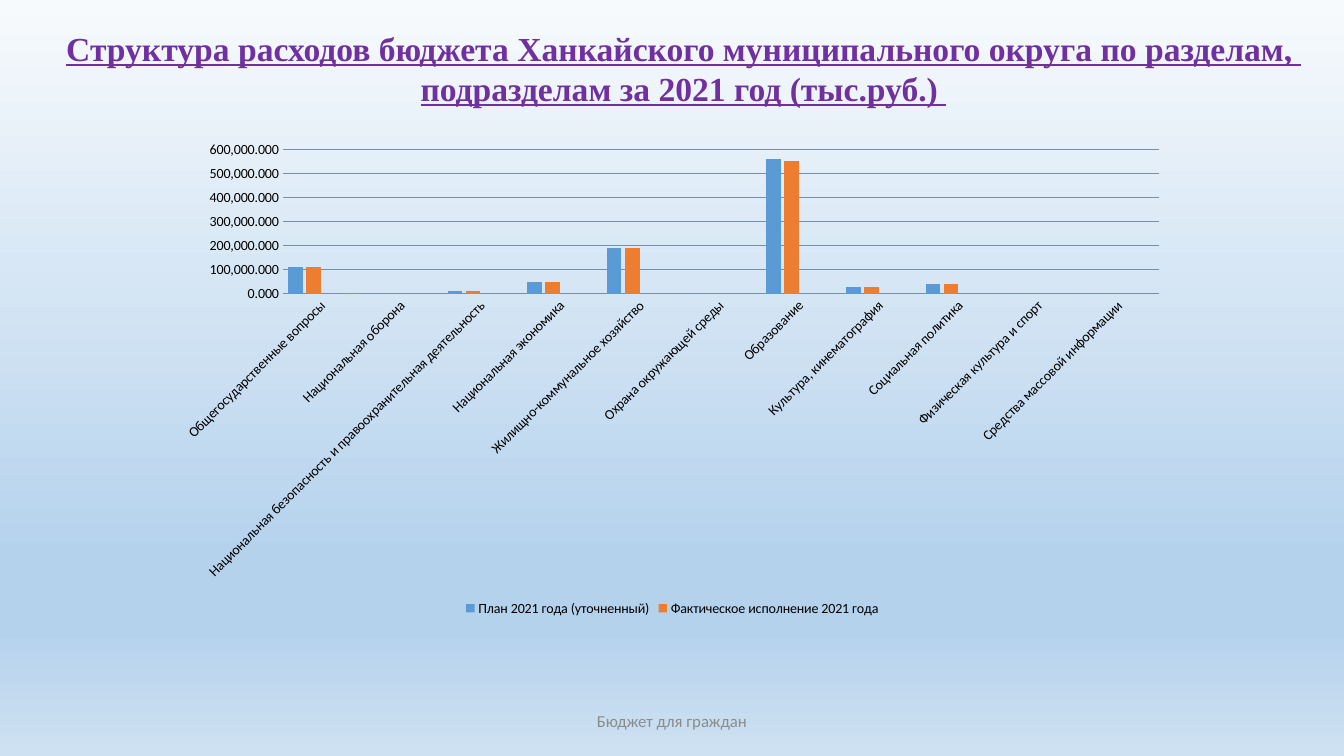
from lxml import etree
from pptx import Presentation
from pptx.chart import data as chart_data
from pptx.dml.color import RGBColor
from pptx.enum import chart as chart_enum, text
from pptx.oxml import ns, parse_xml
from pptx.util import Cm, Pt

# Content
TITLE = [
    "Структура расходов бюджета Ханкайского муниципального округа по разделам, ",
    "подразделам за 2021 год (тыс.руб.) ",
]
FOOTER = ["Бюджет для граждан"]
EXPENSES = [  # section, plan, actual
    ("Общегосударственные вопросы", 110000, 110000),
    ("Национальная оборона", 0, 0),
    ("Национальная безопасность и правоохранительная деятельность", 10000, 10000),
    ("Национальная экономика", 50000, 50000),
    ("Жилищно-коммунальное хозяйство", 190000, 190000),
    ("Охрана окружающей среды", 0, 0),
    ("Образование", 560000, 550000),
    ("Культура, кинематография", 30000, 30000),
    ("Социальная политика", 40000, 40000),
    ("Физическая культура и спорт", 0, 0),
    ("Средства массовой информации", 0, 0),
]
SECTIONS, PLAN, ACTUAL = zip(*EXPENSES)
EMPTY = [0] + [None] * (len(SECTIONS) - 1)
SERIES = [  # name, values, colour, shown in legend
    ("План 2021 года (уточненный)", PLAN, "5B9BD5", True),
    ("Фактическое исполнение 2021 года", ACTUAL, "ED7D31", True),
    ("Series 3", EMPTY, "A5A5A5", False),
    ("Series 4", EMPTY, "FFC000", False),
]
BACKGROUND = [(0, "F7FAFD"), (74, "B5D2EC"), (83, "B5D2EC"), (100, "CEE1F2")]
GRID_COLOUR = "7890A6"

# Formats
TITLE_FONT = {"name": "Times New Roman", "size": Pt(24), "bold": True, "underline": True}
FOOTER_FONT = {"name": "Calibri", "size": Pt(12)}
CHART_FONT = {"name": "Calibri", "size": Pt(10)}


def colour(hex_string):
    return RGBColor.from_string(hex_string)


def set_format(target, values):
    for name, value in values.items():
        setattr(target, name, value)


def set_font(font, values, hex_string):
    set_format(font, values)
    font.color.rgb = colour(hex_string)


def add_text(slide, box, lines, font, hex_string, frame_format):
    shape = slide.shapes.add_textbox(*map(Cm, box))
    frame = shape.text_frame
    frame.text = "\n".join(lines)
    set_format(frame, frame_format)
    for paragraph in frame.paragraphs:
        paragraph.alignment = text.PP_ALIGN.CENTER
        set_font(paragraph.runs[0].font, font, hex_string)


def set_background(slide):
    slide.background.fill.solid()
    properties = slide.background.fill._xPr
    stops = "".join(
        f'<a:gs pos="{position * 1000}"><a:srgbClr val="{hex_string}"/></a:gs>'
        for position, hex_string in BACKGROUND
    )
    gradient = parse_xml(
        f'<a:gradFill {ns.nsdecls("a")} rotWithShape="1"><a:gsLst>{stops}</a:gsLst>'
        '<a:lin ang="5400000" scaled="0"/></a:gradFill>'
    )
    properties.replace(properties.find(ns.qn("a:solidFill")), gradient)


def add_expense_chart(slide, box):
    data = chart_data.CategoryChartData(number_format="#,##0.000")
    data.categories = SECTIONS
    for name, values, _, _ in SERIES:
        data.add_series(name, values)
    kind = chart_enum.XL_CHART_TYPE.COLUMN_CLUSTERED
    chart = slide.shapes.add_chart(kind, *map(Cm, box), data).chart
    set_format(chart, {"has_title": False, "has_legend": True})
    set_font(chart.font, CHART_FONT, "000000")

    # Columns
    plot = chart.plots[0]
    set_format(plot, {"gap_width": 75, "overlap": -25, "vary_by_categories": False})
    for series, (_, _, hex_string, _) in zip(plot.series, SERIES):
        series.format.fill.solid()
        series.format.fill.fore_color.rgb = colour(hex_string)

    # Axes
    for axis in (chart.category_axis, chart.value_axis):
        axis.major_tick_mark = axis.minor_tick_mark = chart_enum.XL_TICK_MARK.NONE
        set_font(axis.tick_labels.font, CHART_FONT, "000000")
    set_format(chart.value_axis, {"minimum_scale": 0, "maximum_scale": 600000,
                                  "major_unit": 100000, "has_major_gridlines": True})
    set_format(chart.value_axis.tick_labels,
               {"number_format": "#,##0.000", "number_format_is_linked": False})
    chart.value_axis.format.line.fill.background()
    for line in (chart.category_axis.format.line, chart.value_axis.major_gridlines.format.line):
        line.color.rgb = colour(GRID_COLOUR)
        line.width = Pt(0.75)
    label_body = chart.category_axis._element.find(ns.qn("c:txPr")).find(ns.qn("a:bodyPr"))
    label_body.set("rot", "-2700000")
    label_body.set("vert", "horz")

    # Legend without the empty series
    legend = chart.legend
    set_format(legend, {"position": chart_enum.XL_LEGEND_POSITION.BOTTOM,
                        "include_in_layout": False})
    set_font(legend.font, CHART_FONT, "000000")
    previous = legend._element.find(ns.qn("c:legendPos"))
    for index, (_, _, _, shown) in enumerate(SERIES):
        if not shown:
            entry = etree.Element(ns.qn("c:legendEntry"))
            etree.SubElement(entry, ns.qn("c:idx")).set("val", str(index))
            etree.SubElement(entry, ns.qn("c:delete")).set("val", "1")
            previous.addnext(entry)
            previous = entry


def main():
    presentation = Presentation()
    set_format(presentation, {"slide_width": Cm(33.87), "slide_height": Cm(19.05)})
    slide = presentation.slides.add_slide(presentation.slide_layouts[6])
    set_background(slide)
    add_text(slide, (1.25, 0.57, 31.95, 2.31), TITLE, TITLE_FONT, "7030A0",
             {"word_wrap": False, "auto_size": text.MSO_AUTO_SIZE.SHAPE_TO_FIT_TEXT})
    add_expense_chart(slide, (4.15, 3.44, 25.58, 12.19))
    add_text(slide, (11.22, 17.66, 11.43, 1.01), FOOTER, FOOTER_FONT, "8C8C8C",
             {"word_wrap": True, "vertical_anchor": text.MSO_ANCHOR.MIDDLE})
    presentation.save("out.pptx")


if __name__ == "__main__":
    main()
